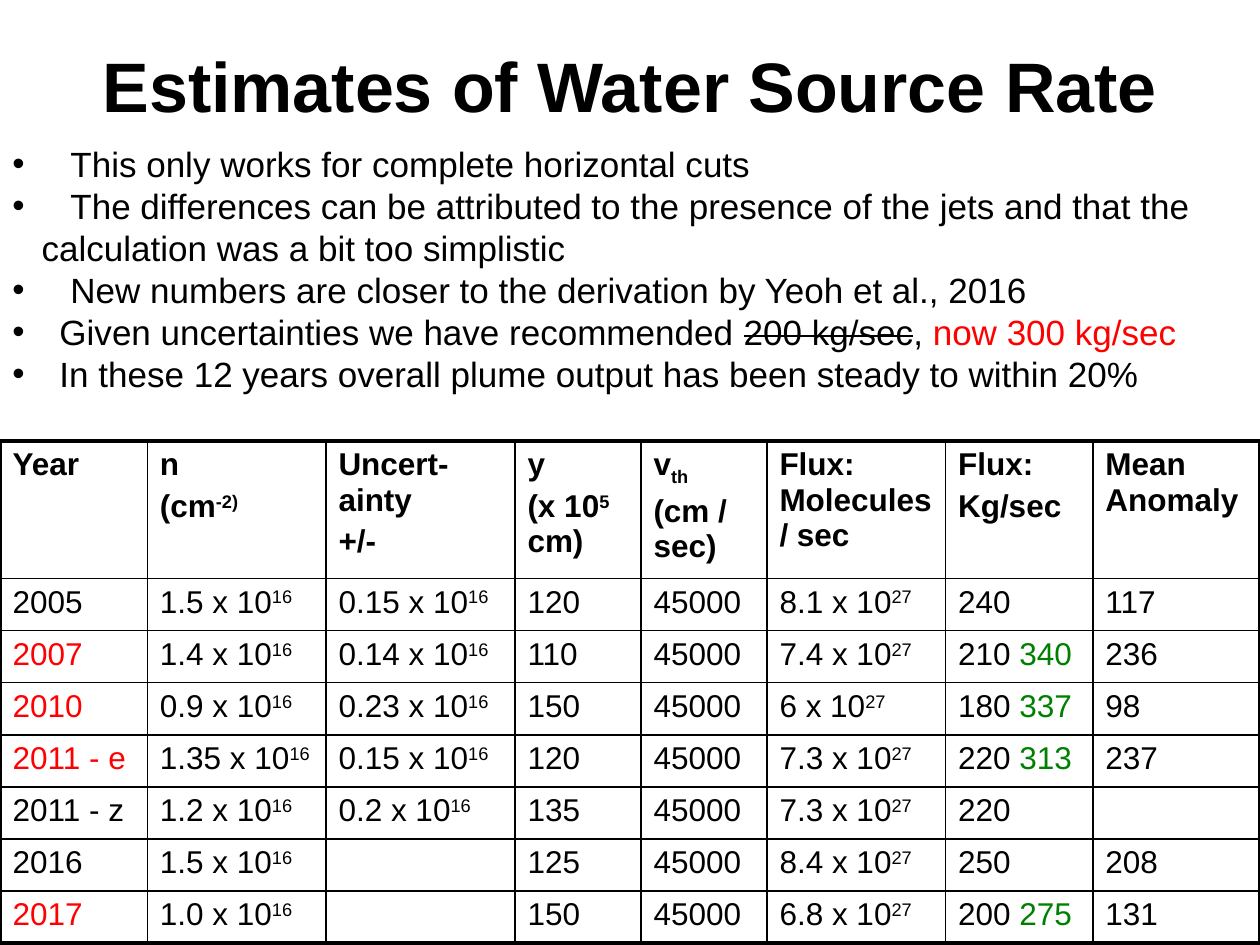
from lxml.etree import SubElement
from pptx import Presentation
from pptx.dml.color import RGBColor
from pptx.enum.text import MSO_ANCHOR, PP_ALIGN
from pptx.oxml.ns import qn
from pptx.util import Cm, Pt

BLACK = RGBColor(0, 0, 0)
RED = RGBColor(255, 0, 0)
GREEN = RGBColor(0, 128, 0)
FONT = "Arial"

# Content: a paragraph is a list of (text, style) runs
PLAIN, SUPER, SUB = {}, {"baseline": "30000"}, {"baseline": "-25000"}
STRIKE = {"strike": "sngStrike"}
TITLE = "Estimates of Water Source Rate"

# Left margin and hanging indent in cm, tab stop in cm or None, runs
BULLETS = [
    (1.17, 1.17, None, [("This only works for complete horizontal cuts", PLAIN)]),
    (0.59, 0.59, 1.17, [("\tThe differences can be attributed to the presence of the jets "
                         "and that the calculation was a bit too simplistic", PLAIN)]),
    (1.17, 1.17, None, [("New numbers are closer to the derivation by Yeoh et al., 2016", PLAIN)]),
    (0.95, 0.95, None, [("Given uncertainties we have recommended ", PLAIN),
                        ("200 kg/sec", STRIKE), (", ", PLAIN),
                        ("now 300 kg/sec", {"color": RED})]),
    (0.95, 0.95, None, [("In these 12 years overall plume output has been steady "
                         "to within 20%", PLAIN)]),
]

HEADERS = [
    [[("Year", PLAIN)]],
    [[("n", PLAIN)], [("(cm", PLAIN), ("-2)", SUPER)]],
    [[("Uncert-ainty", PLAIN)], [("+/-", PLAIN)]],
    [[("y", PLAIN)], [("(x 10", PLAIN), ("5", SUPER), (" cm)", PLAIN)]],
    [[("v", PLAIN), ("th", SUB)], [("(cm / sec)", PLAIN)]],
    [[("Flux: Molecules / sec", PLAIN)]],
    [[("Flux:", PLAIN)], [("Kg/sec", PLAIN)]],
    [[("Mean Anomaly", PLAIN)]],
]

# Year, n and uncertainty (10^16), y, speed, flux (10^27), kg/sec, new kg/sec, anomaly
ROWS = [
    ("2005", "1.5", "0.15", "120", "45000", "8.1", "240", "", "117"),
    ("2007", "1.4", "0.14", "110", "45000", "7.4", "210", "340", "236"),
    ("2010", "0.9", "0.23", "150", "45000", "6", "180", "337", "98"),
    ("2011 - e", "1.35", "0.15", "120", "45000", "7.3", "220", "313", "237"),
    ("2011 - z", "1.2", "0.2", "135", "45000", "7.3", "220", "", ""),
    ("2016", "1.5", "", "125", "45000", "8.4", "250", "", "208"),
    ("2017", "1.0", "", "150", "45000", "6.8", "200", "275", "131"),
]
COLUMN_WIDTHS = [2.97, 3.6, 3.81, 2.54, 2.54, 3.6, 2.97, 3.37]
HEADER_HEIGHT, ROW_HEIGHT = 2.62, 1.05


def power(value, exponent):
    return [(f"{value} x 10", PLAIN), (exponent, SUPER)] if value else []


def row_cells(row):
    """Turn one data row into a list of cells, each a list of paragraphs."""
    year, density, error, y, speed, flux, mass, new_mass, anomaly = row
    mass_runs = [(mass, PLAIN)]
    if new_mass:
        mass_runs = [(mass + " ", PLAIN), (new_mass, {"color": GREEN})]
    # Years with a revised rate are red
    year_style = {"color": RED} if new_mass else PLAIN
    return [[runs] for runs in (
        [(year, year_style)], power(density, "16"), power(error, "16"), [(y, PLAIN)],
        [(speed, PLAIN)], power(flux, "27"), mass_runs, [(anomaly, PLAIN)] if anomaly else [])]


def write(paragraph, runs, size, bold=False):
    font = paragraph.font
    font.name, font.size, font.bold = FONT, Pt(size), bold
    for text, style in runs:
        run = paragraph.add_run()
        run.text = text
        run.font.color.rgb = style.get("color", BLACK)
        for name in ("baseline", "strike"):
            if name in style:
                run.font._element.set(name, style[name])


def add_bullet(paragraph, left, hanging, tab):
    properties = paragraph._p.get_or_add_pPr()
    properties.set("marL", str(Cm(left)))
    properties.set("indent", str(-Cm(hanging)))
    SubElement(properties, qn("a:buFont"), typeface=FONT)
    SubElement(properties, qn("a:buChar"), char="•")
    if tab:
        tabs = SubElement(properties, qn("a:tabLst"))
        SubElement(tabs, qn("a:tab"), pos=str(Cm(tab)), algn="l")


def set_borders(cell, widths):
    """Draw the left, right, top and bottom borders, widths in points."""
    properties = cell._tc.get_or_add_tcPr()
    for side, width in zip("LRTB", widths):
        line = SubElement(properties, qn(f"a:ln{side}"), w=str(Pt(width)))
        fill = SubElement(line, qn("a:solidFill"))
        SubElement(fill, qn("a:srgbClr"), val=str(BLACK))


presentation = Presentation()
presentation.slide_width, presentation.slide_height = Cm(25.4), Cm(19.05)
slide = presentation.slides.add_slide(presentation.slide_layouts[6])

# Title
title = slide.shapes.add_textbox(Cm(0.42), Cm(0.85), Cm(24.55), Cm(1.69)).text_frame
title.word_wrap = True
title.vertical_anchor = MSO_ANCHOR.MIDDLE
title.paragraphs[0].alignment = PP_ALIGN.CENTER
write(title.paragraphs[0], [(TITLE, PLAIN)], 40, bold=True)

# Table
cells = [HEADERS] + [row_cells(row) for row in ROWS]
last_row, last_column = len(cells) - 1, len(COLUMN_WIDTHS) - 1
table = slide.shapes.add_table(
    len(cells), len(COLUMN_WIDTHS), 0, Cm(8.89), Cm(sum(COLUMN_WIDTHS)),
    Cm(HEADER_HEIGHT + ROW_HEIGHT * last_row)).table
for column, width in zip(table.columns, COLUMN_WIDTHS):
    column.width = Cm(width)
for r, row in enumerate(cells):
    table.rows[r].height = Cm(ROW_HEIGHT if r else HEADER_HEIGHT)
    for c, paragraphs in enumerate(row):
        cell = table.cell(r, c)
        edges = (c == 0, c == last_column, r == 0, r == last_row)
        set_borders(cell, [2.25 if outer else 1 for outer in edges])
        cell.fill.background()
        for i, runs in enumerate(paragraphs):
            paragraph = cell.text_frame.paragraphs[0]
            if i:
                paragraph = cell.text_frame.add_paragraph()
                paragraph.space_before = Pt(3.6)
            write(paragraph, runs, 18, bold=r == 0)

# Bullets
body = slide.shapes.add_textbox(0, Cm(2.74), Cm(25.4), Cm(6.25)).text_frame
body.word_wrap = True
for i, (left, hanging, tab, runs) in enumerate(BULLETS):
    paragraph = body.add_paragraph() if i else body.paragraphs[0]
    add_bullet(paragraph, left, hanging, tab)
    write(paragraph, runs, 20)

presentation.save("out.pptx")
